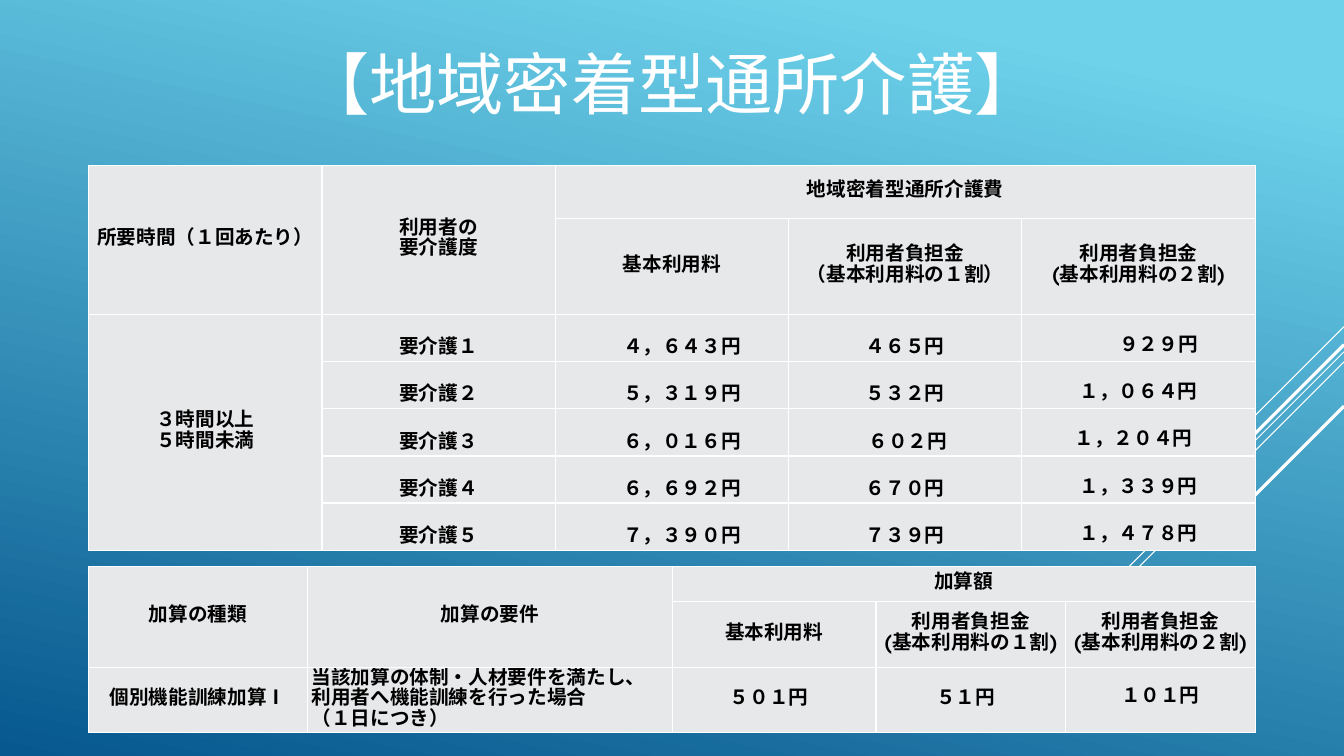
from lxml import etree
from pptx import Presentation
from pptx.dml.color import RGBColor
from pptx.enum.shapes import MSO_CONNECTOR
from pptx.enum.text import MSO_ANCHOR, PP_ALIGN
from pptx.oxml.ns import qn
from pptx.util import Inches, Pt

STRAIGHT = MSO_CONNECTOR.STRAIGHT
TOP, MIDDLE = MSO_ANCHOR.TOP, MSO_ANCHOR.MIDDLE
CENTER, JUSTIFY = PP_ALIGN.CENTER, PP_ALIGN.JUSTIFY
WHITE = RGBColor(0xFF, 0xFF, 0xFF)
BLACK = RGBColor(0, 0, 0)
GREY = RGBColor(0xE7, 0xE8, 0xEA)
SKY = RGBColor(0x6E, 0xD2, 0xEB)
NAVY = RGBColor(0x06, 0x58, 0x8E)
FONT = "TeX Gyre Adventor"
PAD = 0.04


def add_grid(top, widths, heights, texts, merges):
    """Add a table of plain grey cells with white borders."""
    frame = slide.shapes.add_table(
        len(heights), len(widths), Inches(0.88), Inches(top),
        Inches(sum(widths)), Inches(sum(heights)))
    table = frame.table
    table.first_row = table.horz_banding = False
    for col, width in zip(table.columns, widths):
        col.width = Inches(width)
    for row, height in zip(table.rows, heights):
        row.height = Inches(height)
    for r, line in enumerate(texts):
        for c, text in enumerate(line):
            cell = table.cell(r, c)
            cell.fill.solid()
            cell.fill.fore_color.rgb = GREY
            props = cell._tc.get_or_add_tcPr()
            for i, side in enumerate(("lnL", "lnR", "lnT", "lnB")):
                edge = etree.Element(qn("a:" + side), w=str(Pt(1)))
                paint = etree.SubElement(edge, qn("a:solidFill"))
                etree.SubElement(paint, qn("a:srgbClr"), val=str(WHITE))
                props.insert(i, edge)
            if text:
                style_cell(cell, text)
    for r1, c1, r2, c2 in merges:
        table.cell(r1, c1).merge(table.cell(r2, c2))
    return table


def style_cell(cell, text):
    """Write one paragraph for each line of the text."""
    cell.vertical_anchor = MIDDLE
    cell.margin_left = cell.margin_right = Inches(PAD)
    cell.margin_top = cell.margin_bottom = 0
    for i, part in enumerate(text.split("\n")):
        body = cell.text_frame
        para = body.add_paragraph() if i else body.paragraphs[0]
        para.alignment = CENTER
        para.line_spacing = Pt(14.6)
        run = para.add_run()
        run.text = part
        run.font.name = FONT
        run.font.size = Pt(14)
        run.font.bold = True
        run.font.color.rgb = BLACK


prs = Presentation()
prs.slide_width, prs.slide_height = Inches(13.33), Inches(7.5)
slide = prs.slides.add_slide(prs.slide_layouts[5])

# Background
fill = slide.background.fill
fill.gradient()
fill.gradient_angle = 258
for stop, color, place in zip(fill.gradient_stops, (SKY, NAVY), (0.1, 1)):
    stop.color.rgb = color
    stop.position = place

# Diagonal lines from the right edge: start height, run, weight
for start, run, weight in [(3.24, 1, 0.75), (3.49, 3.26, 0.75),
                           (3.59, 2.07, 0.75), (3.42, 1.91, 2.25),
                           (4.03, 1.39, 2.25)]:
    line = slide.shapes.add_connector(
        STRAIGHT, Inches(13.33), Inches(start),
        Inches(13.33 - run), Inches(start + run))
    line.line.color.rgb = WHITE
    line.line.width = Pt(weight)
    etree.SubElement(line._element.spPr, qn("a:effectLst"))

# Title
title = slide.shapes.title
title.left = title.top = 0
title.width, title.height = Inches(13.33), Inches(1.64)
title.text_frame.vertical_anchor = MIDDLE
para = title.text_frame.paragraphs[0]
para.alignment = CENTER
run = para.add_run()
run.text = "【地域密着型通所介護】"
run.font.name = FONT
run.font.size = Pt(48)
run.font.color.rgb = WHITE

# Surcharge table
extra = add_grid(5.62, [2.17, 3.62, 2.02, 1.88, 1.88], [0.35, 0.65, 0.65], [
    ["加算の種類", "加算の要件", "加算額", "", ""],
    ["", "", "基本利用料", "利用者負担金\n(基本利用料の１割)",
     "利用者負担金\n(基本利用料の２割)"],
    ["個別機能訓練加算Ⅰ",
     "当該加算の体制・人材要件を満たし、\n利用者へ機能訓練を行った場合\n（１日につき）",
     "５０１円", "５１円", "１０１円"],
], [(0, 0, 1, 0), (0, 1, 1, 1), (0, 2, 0, 4)])
for para in extra.cell(2, 1).text_frame.paragraphs:
    para.alignment = JUSTIFY
for c in (2, 3):
    extra.cell(2, c).margin_right = Inches(PAD + 0.1)
last = extra.cell(2, 4)
last.vertical_anchor = TOP
last.margin_top = Inches(0.2)

# Fee table
fees = [["４，６４３円", "４６５円", "９２９円"],
        ["５，３１９円", "５３２円", "１，０６４円"],
        ["６，０１６円", "６０２円", "１，２０４円"],
        ["６，６９２円", "６７０円", "１，３３９円"],
        ["７，３９０円", "７３９円", "１，４７８円"]]
rows = [["", "要介護" + level] + fee for level, fee in zip("１２３４５", fees)]
rows[0][0] = "３時間以上\n５時間未満"
main = add_grid(1.64, [2.314] * 5, [0.53, 0.95] + [0.468] * 5, [
    ["所要時間（１回あたり）", "利用者の\n要介護度", "地域密着型通所介護費", "", ""],
    ["", "", "基本利用料", "利用者負担金\n（基本利用料の１割）",
     "利用者負担金\n(基本利用料の２割)"],
] + rows, [(0, 0, 1, 0), (0, 1, 1, 1), (0, 2, 0, 4), (2, 0, 6, 0)])
for r in range(2, 7):
    for c in range(1, 5):
        main.cell(r, c).text_frame.paragraphs[0].line_spacing = 1.5
    main.cell(r, 2).margin_left = Inches(PAD + 0.2)
    main.cell(r, 4).vertical_anchor = TOP

# Amounts set slightly off centre
main.cell(2, 4).margin_left = Inches(PAD + 0.4)
main.cell(4, 3).margin_left = Inches(PAD + 0.05)
main.cell(4, 4).margin_right = Inches(PAD + 0.1)

prs.save("out.pptx")
